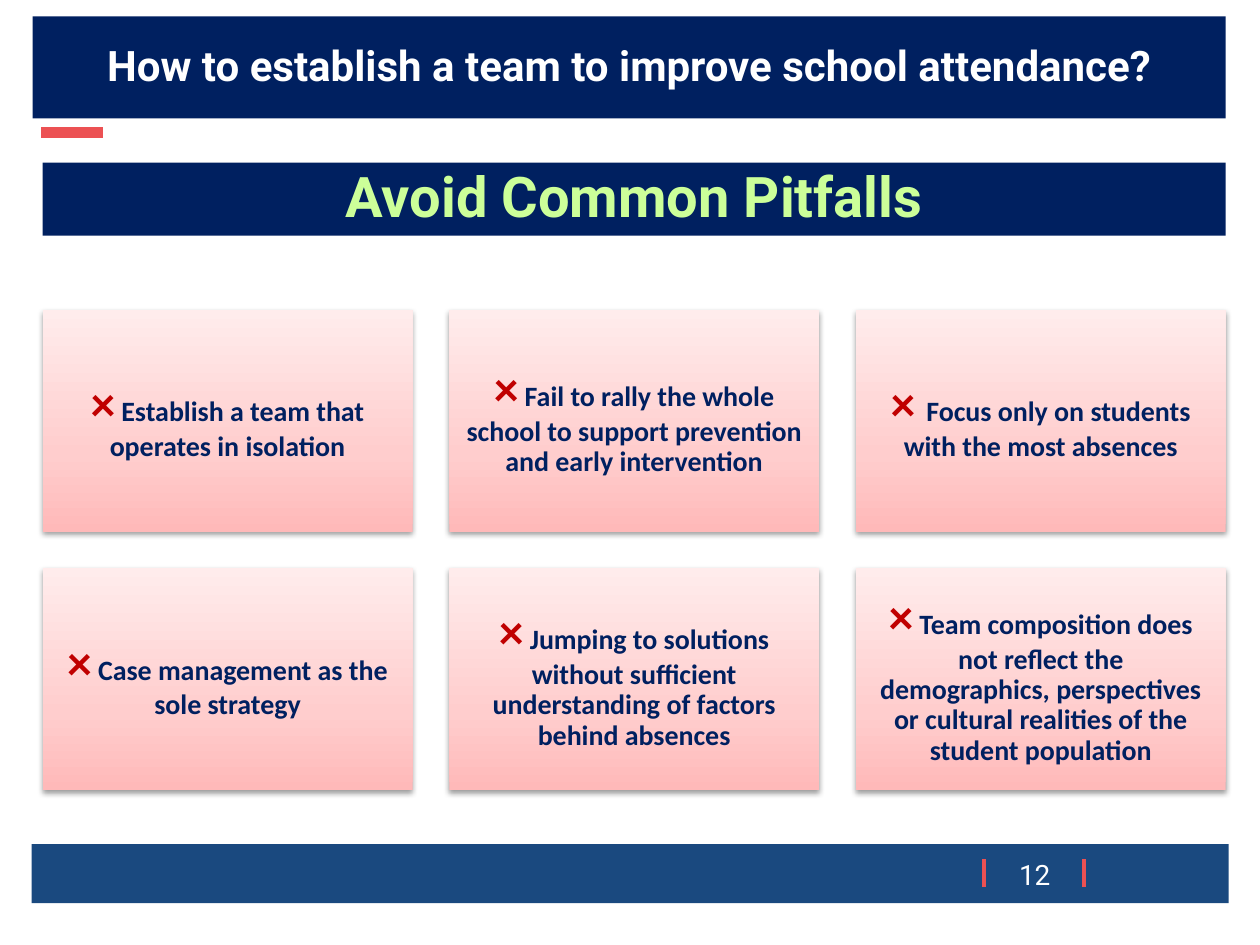
from lxml.etree import SubElement
from pptx import Presentation
from pptx.dml.color import RGBColor
from pptx.enum.shapes import MSO_CONNECTOR as CONN, MSO_SHAPE as SHAPE
from pptx.enum.text import MSO_ANCHOR as ANCHOR, PP_ALIGN as ALIGN
from pptx.oxml.ns import qn
from pptx.util import Cm, Pt

NAVY = RGBColor(0x00, 0x20, 0x60)
BLUE = RGBColor(0x1A, 0x49, 0x7F)
CORAL = RGBColor(0xEC, 0x51, 0x53)
RED = RGBColor(0xC0, 0x00, 0x00)
LIME = RGBColor(0xCC, 0xFF, 0x99)
WHITE = RGBColor(0xFF, 0xFF, 0xFF)
CARD_STOPS = [
    (0, RGBColor(0xFF, 0xB9, 0xB9)),
    (35, RGBColor(0xFF, 0xCD, 0xCD)),
    (100, RGBColor(0xFF, 0xEC, 0xEC)),
]

CROSS = {"name": "Calibri", "size": Pt(28), "bold": True}
BODY = {"name": "Calibri", "size": Pt(16), "bold": True}
TITLE = {"name": "Roboto", "size": Pt(24), "bold": True}
SUBTITLE = {"name": "Roboto", "size": Pt(32), "bold": True}
NUMBER = {"name": "Roboto", "size": Pt(16)}

PITFALLS = [
    ("×", " Establish a team that operates in isolation"),
    ("×", " Fail to rally the whole school to support prevention and early intervention"),
    ("× ", "Focus only on students with the most absences"),
    ("×", " Case management as the sole strategy"),
    ("×", " Jumping to solutions without sufficient understanding of factors behind absences"),
    ("×", " Team composition does not reflect the demographics, perspectives "
          "or cultural realities of the student population"),
]


def add_box(slide, x, y, w, h, color):
    """Add a flat rectangle without outline, measured in centimetres."""
    s = slide.shapes.add_shape(SHAPE.RECTANGLE, Cm(x), Cm(y), Cm(w), Cm(h))
    s.shadow.inherit = False
    s.fill.solid()
    s.fill.fore_color.rgb = color
    s.line.fill.background()
    return s


def add_line(slide, x1, y1, x2, y2, width):
    """Add a coral accent line, measured in centimetres."""
    s = slide.shapes.add_connector(CONN.STRAIGHT, Cm(x1), Cm(y1), Cm(x2), Cm(y2))
    s.line.color.rgb = CORAL
    s.line.width = Pt(width)
    SubElement(s._element.spPr, qn("a:effectLst"))


def write(s, runs, margin_x, margin_y, spacing=0.9):
    """Write one centred paragraph of (text, font format, colour) runs."""
    tf = s.text_frame
    frame = {
        "word_wrap": True, "vertical_anchor": ANCHOR.MIDDLE,
        "margin_left": Cm(margin_x), "margin_right": Cm(margin_x),
        "margin_top": Cm(margin_y), "margin_bottom": Cm(margin_y),
    }
    for key, value in frame.items():
        setattr(tf, key, value)
    p = tf.paragraphs[0]
    p.alignment = ALIGN.CENTER
    p.line_spacing = spacing
    for text, font, color in runs:
        r = p.add_run()
        r.text = text
        r.font.color.rgb = color
        for key, value in font.items():
            setattr(r.font, key, value)
    return p


def add_banner(slide, x, y, w, h, text, font, color):
    """Place a navy heading bar."""
    s = add_box(slide, x, y, w, h, NAVY)
    write(s, [(text, font, color)], 0.18, 0.1)


def add_footer(slide, x, y, w, h):
    """Place the footer bar with the page number between two ticks."""
    add_box(slide, x, y, w, h, BLUE)
    for tick in (19.2, 21.21):
        add_line(slide, x + tick, y + 0.3, x + tick, y + 0.86, 2.25)
    s = slide.shapes.add_textbox(Cm(x + 19.61), Cm(y + 0.13), Cm(1.22), Cm(0.94))
    write(s, [("12", NUMBER, WHITE)], 0.25, 0.13, 1.0)


def add_card(slide, x, y, w, h, cross, text):
    """Place one shaded pitfall card."""
    s = add_box(slide, x, y, w, h, WHITE)
    s.fill.gradient()
    s.fill.gradient_angle = 90
    stops = s._element.spPr.find(".//" + qn("a:gsLst"))
    for stop in list(stops):
        stops.remove(stop)
    for pos, color in CARD_STOPS:
        stop = SubElement(stops, qn("a:gs"), pos=str(pos * 1000))
        SubElement(stop, qn("a:srgbClr"), val=str(color))
    effects = s._element.spPr.find(qn("a:effectLst"))
    shadow = SubElement(effects, qn("a:outerShdw"), blurRad=str(Pt(3.1)),
                        dist=str(Pt(1.6)), dir="5400000", rotWithShape="0")
    black = SubElement(shadow, qn("a:srgbClr"), val="000000")
    SubElement(black, qn("a:alpha"), val="38000")
    p = write(s, [(cross, CROSS, RED), (text, BODY, NAVY)], 0.3, 0.3)
    after = SubElement(p._p.get_or_add_pPr(), qn("a:spcAft"))
    SubElement(after, qn("a:spcPct"), val="35000")


def add_cards(slide, x, y, w, h, cols=3, rows=2, gap=0.74):
    """Lay the pitfall cards out in an even grid."""
    card_w = (w - (cols - 1) * gap) / cols
    card_h = (h - (rows - 1) * gap) / rows
    for i, (cross, text) in enumerate(PITFALLS):
        row, col = divmod(i, cols)
        add_card(slide, x + col * (card_w + gap), y + row * (card_h + gap),
                 card_w, card_h, cross, text)


def main():
    """Build and save the slide."""
    prs = Presentation()
    prs.slide_width, prs.slide_height = Cm(25.4), Cm(19.05)
    slide = prs.slides.add_slide(prs.slide_layouts[6])
    add_line(slide, 0.83, 2.67, 2.08, 2.67, 6)
    add_footer(slide, 0.64, 17.02, 24.13, 1.19)
    add_banner(slide, 0.66, 0.33, 24.05, 2.06,
               "How to establish a team to improve school attendance?", TITLE, WHITE)
    add_banner(slide, 0.86, 3.28, 23.85, 1.47, "Avoid Common Pitfalls", SUBTITLE, LIME)
    add_cards(slide, 0.86, 6.25, 23.85, 9.68)
    prs.save("out.pptx")


if __name__ == "__main__":
    main()
